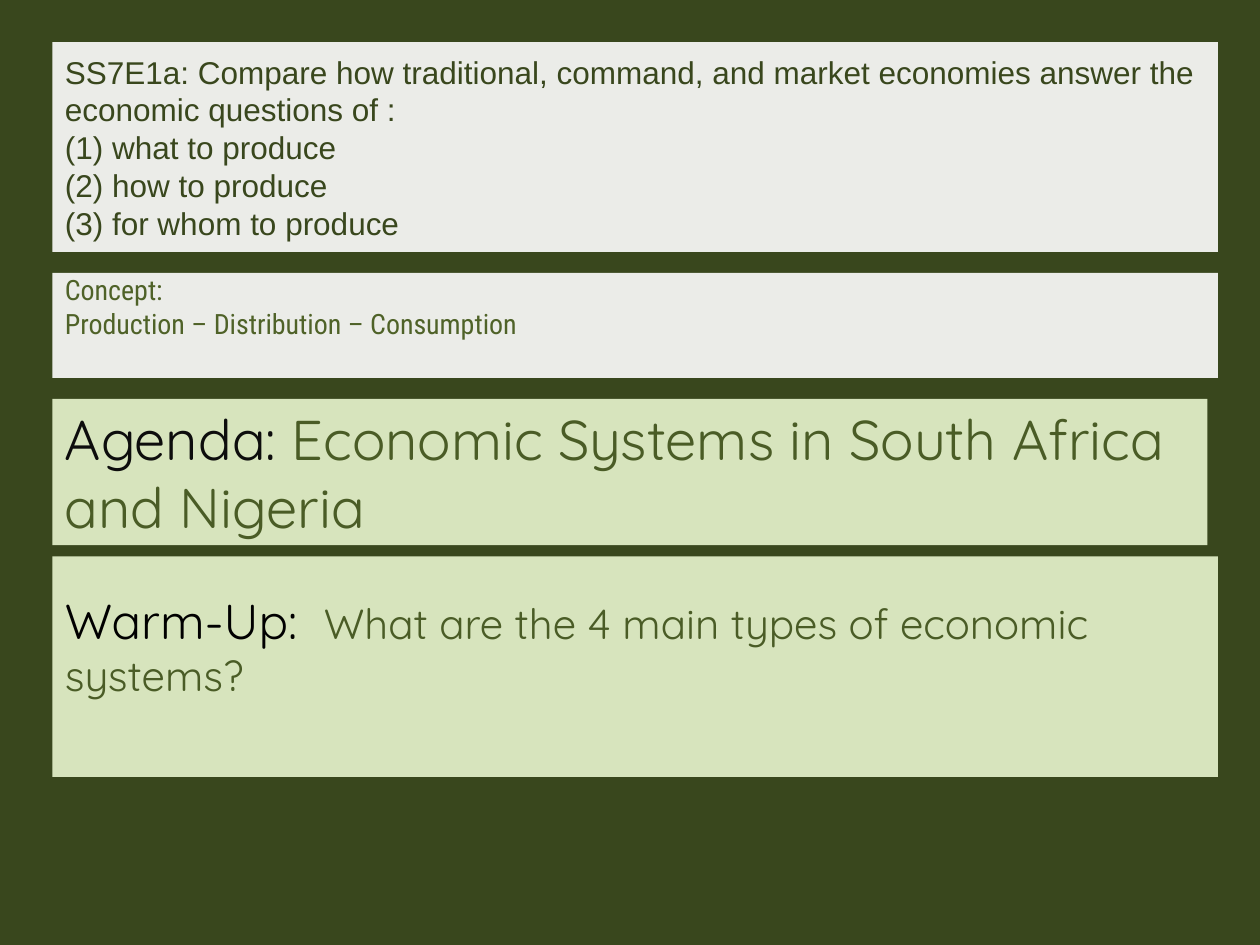
from dataclasses import dataclass

from lxml import etree
from pptx import Presentation
from pptx.dml.color import RGBColor
from pptx.enum.shapes import MSO_SHAPE
from pptx.enum.text import MSO_ANCHOR, PP_ALIGN
from pptx.oxml.ns import qn
from pptx.util import Pt

RECTANGLE = MSO_SHAPE.RECTANGLE
TOP, MIDDLE = MSO_ANCHOR.TOP, MSO_ANCHOR.MIDDLE
LEFT = PP_ALIGN.LEFT


@dataclass(frozen=True)
class Theme:
    """Colours, fonts and type sizes of the slide."""
    background: str = "39471D"
    pale: str = "FFFFFF"
    green: str = "D7E4BD"
    standard: str = "39471D"
    concept: str = "4F6228"
    answer: str = "4A5C26"
    agenda_label: str = "0D0D0D"
    warm_up_label: str = "000000"
    standard_font: str = "Arial"
    concept_font: str = "Roboto Condensed"
    lesson_font: str = "Quicksand"
    standard_size: int = 18
    concept_size: int = 16
    agenda_size: int = 32
    warm_up_size: int = 28
    question_size: int = 24


THEME = Theme()


def add_panel(slide, box, colour, anchor, opacity=100):
    """Add a borderless panel and return its text frame."""
    panel = slide.shapes.add_shape(RECTANGLE, *(Pt(length) for length in box))
    panel.shadow.inherit = False
    panel.line.fill.background()
    panel.fill.solid()
    panel.fill.fore_color.rgb = RGBColor.from_string(colour)
    if opacity < 100:
        tint = panel.fill._xPr.find(qn("a:solidFill"))[0]
        etree.SubElement(tint, qn("a:alpha"), val=str(opacity * 1000))
    frame = panel.text_frame
    frame.word_wrap = True
    frame.vertical_anchor = anchor
    return frame


def style(font, size, colour, name):
    """Set the size, colour and typeface of a font."""
    font.size = Pt(size)
    font.color.rgb = RGBColor.from_string(colour)
    font.name = name


def add_standard(slide, box):
    """Place the learning standard with its three questions."""
    frame = add_panel(slide, box, THEME.pale, MIDDLE, opacity=90)
    standard = frame.paragraphs[0]
    standard.text = "\v".join((
        "SS7E1a: Compare how traditional, command, and market economies "
        "answer the economic questions of :",
        "(1) what to produce",
        "(2) how to produce",
        "(3) for whom to produce",
    ))
    standard.alignment = LEFT
    style(standard.font, THEME.standard_size, THEME.standard, THEME.standard_font)


def add_concept(slide, box):
    """Place the concept heading and its line of terms."""
    frame = add_panel(slide, box, THEME.pale, TOP, opacity=90)
    frame.text = "Concept:\nProduction – Distribution – Consumption"
    for concept in frame.paragraphs:
        concept.alignment = LEFT
        concept.line_spacing = 0.8
        style(concept.font, THEME.concept_size, THEME.concept, THEME.concept_font)
    frame.paragraphs[1].space_before = Pt(3.75)


def add_lesson_part(slide, box, label, answer, tab=None, space_below=3.6):
    """Place a label and its answer, each given as text, size and colour."""
    frame = add_panel(slide, box, THEME.green, MIDDLE)
    frame.margin_bottom = Pt(space_below)
    sentence = frame.paragraphs[0]
    sentence.alignment = LEFT
    if tab:
        stops = etree.SubElement(sentence._p.get_or_add_pPr(), qn("a:tabLst"))
        etree.SubElement(stops, qn("a:tab"), pos=str(Pt(tab)), algn="l")
    for text, size, colour in (label, answer):
        run = sentence.add_run()
        run.text = text
        style(run.font, size, colour, THEME.lesson_font)


def main():
    """Build the lesson opener and save it."""
    deck = Presentation()
    deck.slide_width, deck.slide_height = Pt(720), Pt(540)
    slide = deck.slides.add_slide(deck.slide_layouts[6])
    slide.background.fill.solid()
    slide.background.fill.fore_color.rgb = RGBColor.from_string(THEME.background)

    left, width = 30, 666
    add_standard(slide, (left, 24, width, 120))
    add_concept(slide, (left, 156, width, 60))
    add_lesson_part(
        slide, (left, 228, width - 6, 83.5),
        ("Agenda: ", THEME.agenda_size, THEME.agenda_label),
        ("Economic Systems in South Africa and Nigeria",
         THEME.agenda_size, THEME.answer),
    )
    add_lesson_part(
        slide, (left, 318, width, 126),
        ("Warm-Up:\t", THEME.warm_up_size, THEME.warm_up_label),
        ("What are the 4 main types of economic systems?",
         THEME.question_size, THEME.answer),
        tab=148, space_below=28.6,
    )
    deck.save("out.pptx")


if __name__ == "__main__":
    main()
